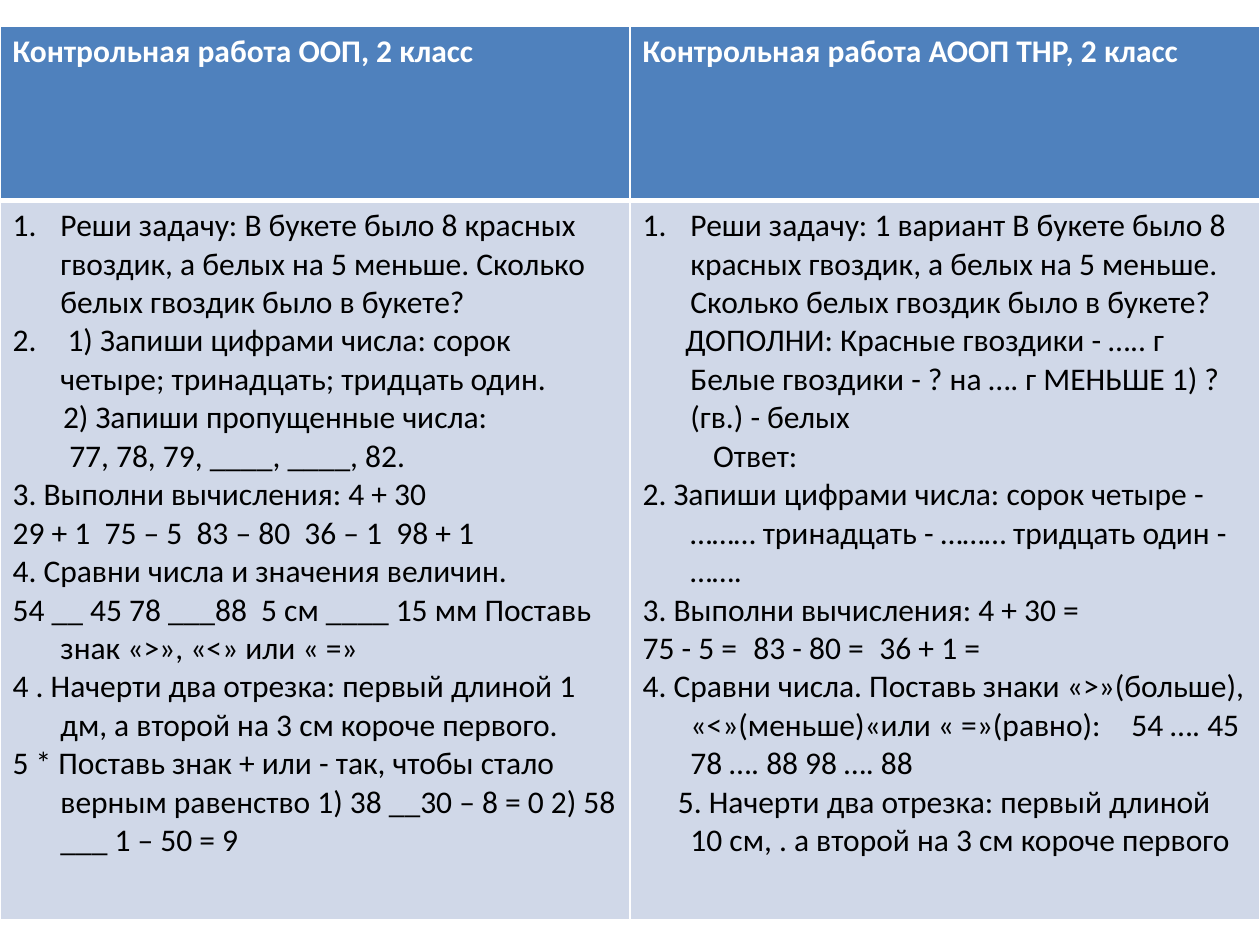
import pptx
import pptx.dml.color
import pptx.oxml
import pptx.oxml.ns
import pptx.util

Inches = pptx.util.Inches
Pt = pptx.util.Pt

COLORS = {"header": "4F81BD", "body": "D0D8E8", "white": "FFFFFF", "black": "000000"}
TEXT_LEFT = 0.38
HANGING = -0.38

HEADINGS = ["Контрольная работа ООП, 2 класс", "Контрольная работа АООП ТНР, 2 класс"]

# Each task line: text, then optional settings (first-line indent, numbering, tab stops)
REGULAR_TASKS = [
    ("Реши задачу: В букете было 8 красных гвоздик, а белых на 5 меньше. "
     "Сколько белых гвоздик было в букете?", {"numbered": True}),
    (" 1) Запиши цифрами числа: сорок четыре; тринадцать; тридцать один.",
     {"numbered": True}),
    ("2) Запиши пропущенные числа:", {"indent": 0.02}),
    ("77, 78, 79, ____, ____, 82.", {"indent": 0.07}),
    ("3. Выполни вычисления: 4 + 30", {}),
    ("29 + 1  75 – 5  83 – 80  36 – 1  98 + 1", {}),
    ("4. Сравни числа и значения величин.", {}),
    ("54 __ 45 78 ___88  5 см ____ 15 мм Поставь знак «>», «<» или « =»", {}),
    ("4 . Начерти два отрезка: первый длиной 1 дм, а второй на 3 см короче первого.", {}),
    ("5 * Поставь знак + или - так, чтобы стало верным равенство "
     "1) 38 __30 – 8 = 0 2) 58 ___ 1 – 50 = 9", {}),
]
ADAPTED_TASKS = [
    ("Реши задачу: 1 вариант В букете было 8 красных гвоздик, а белых на 5 меньше. "
     "Сколько белых гвоздик было в букете?", {"numbered": True}),
    ("ДОПОЛНИ: Красные гвоздики - ….. г Белые гвоздики - ? на …. г МЕНЬШЕ "
     "1) ? (гв.) - белых", {"indent": -0.04}),
    ("Ответ:", {"indent": 0.18}),
    ("2. Запиши цифрами числа: сорок четыре - ……… тринадцать - ……… "
     "тридцать один - …….", {}),
    ("3. Выполни вычисления: 4 + 30 =", {}),
    ("75 - 5 =\t83 - 80 =\t36 + 1 =", {"tabs": (1.2, 2.81)}),
    ("4. Сравни числа. Поставь знаки «>»(больше), «<»(меньше)«или « =»(равно):\t"
     "54 …. 45 78 …. 88 98 …. 88", {"tabs": (3.8,)}),
    ("5. Начерти два отрезка: первый длиной 10 см, . а второй на 3 см короче первого",
     {"indent": -0.1}),
]


def rgb(name):
    return pptx.dml.color.RGBColor.from_string(COLORS[name])


def format_text(paragraph, color, bold):
    for run in paragraph.runs:
        run.font.name = "Calibri"
        run.font.size = Pt(18)
        run.font.bold = bold
        run.font.color.rgb = rgb(color)


def style_cell(cell, fill, widths):
    """Fill a cell and give it white borders; widths maps side to points."""
    cell.fill.solid()
    cell.fill.fore_color.rgb = rgb(fill)
    properties = cell._tc.get_or_add_tcPr()
    for position, (side, width) in enumerate(widths.items()):
        border = pptx.oxml.parse_xml(
            f'<a:ln{side} {pptx.oxml.ns.nsdecls("a")} w="{Pt(width)}"><a:solidFill>'
            f'<a:srgbClr val="{COLORS["white"]}"/></a:solidFill></a:ln{side}>')
        properties.insert(position, border)


def format_indent(paragraph, indent=HANGING, numbered=False, tabs=()):
    properties = paragraph._p.get_or_add_pPr()
    properties.set("marL", str(Inches(TEXT_LEFT)))
    properties.set("indent", str(Inches(indent)))
    bullet = '<a:buAutoNum {} type="arabicPeriod"/>' if numbered else "<a:buNone {}/>"
    namespace = pptx.oxml.ns.nsdecls("a")
    properties.append(pptx.oxml.parse_xml(bullet.format(namespace)))
    if tabs:
        stops = "".join(f'<a:tab pos="{Inches(stop)}" algn="l"/>' for stop in tabs)
        properties.append(pptx.oxml.parse_xml(f"<a:tabLst {namespace}>{stops}</a:tabLst>"))


def write_heading(cell, heading):
    cell.text_frame.text = heading
    format_text(cell.text_frame.paragraphs[0], "white", True)
    style_cell(cell, "header", {"L": 1, "R": 1, "T": 1, "B": 3})


def write_tasks(cell, tasks):
    frame = cell.text_frame
    for number, (text, settings) in enumerate(tasks):
        paragraph = frame.add_paragraph() if number else frame.paragraphs[0]
        paragraph.text = text
        format_text(paragraph, "black", False)
        format_indent(paragraph, **settings)
    style_cell(cell, "body", {"L": 1, "R": 1, "T": 3, "B": 1})


def main():
    presentation = pptx.Presentation()
    presentation.slide_width = Inches(10)
    presentation.slide_height = Inches(7.5)
    slide = presentation.slides.add_slide(presentation.slide_layouts[6])

    # Comparison table: regular and adapted test side by side
    comparison = slide.shapes.add_table(
        2, 2, Inches(0), Inches(0.21), Inches(10), Inches(7.09)).table
    comparison.rows[0].height = Inches(1.38)
    comparison.rows[1].height = Inches(5.71)
    for column, tasks in enumerate((REGULAR_TASKS, ADAPTED_TASKS)):
        write_heading(comparison.cell(0, column), HEADINGS[column])
        write_tasks(comparison.cell(1, column), tasks)

    presentation.save("out.pptx")


if __name__ == "__main__":
    main()
